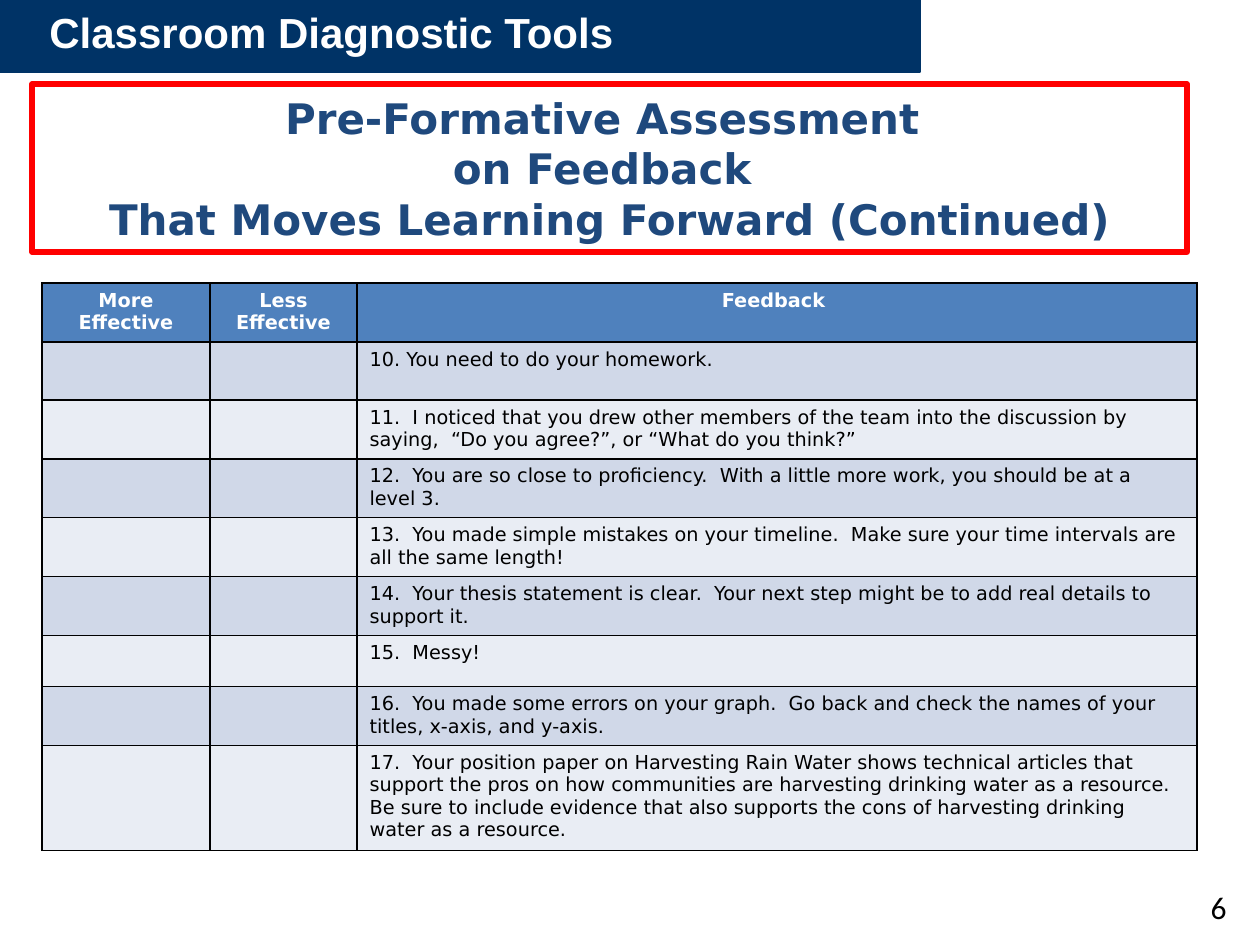
from pptx import Presentation
from pptx.dml.color import RGBColor
from pptx.enum.shapes import MSO_SHAPE
from pptx.enum.text import MSO_ANCHOR, PP_ALIGN
from pptx.oxml import parse_xml
from pptx.oxml.ns import nsdecls
from pptx.util import Emu, Pt

PX = 914400 // 126
NAVY, BLUE, RED = "003366", "1F497D", "FF0000"
WHITE, BLACK = "FFFFFF", "000000"
HEADER_FILL, BAND_FILLS = "4F81BD", ("D0D8E8", "E9EDF4")
BODY_FONT = "DejaVu Sans"

BANNER = "Classroom Diagnostic Tools"
TITLE = "Pre-Formative Assessment \von Feedback \vThat Moves Learning Forward (Continued)"
SLIDE_NUMBER = "6"
HEADERS = ["More Effective", "Less Effective", "Feedback "]
FEEDBACK = [
    "10. You need to do your homework.",
    "11.  I noticed that you drew other members of the team into the discussion by saying,  “Do you agree?”, or “What do you think?”",
    "12.  You are so close to proficiency.  With a little more work, you should be at a level 3.",
    "13.  You made simple mistakes on your timeline.  Make sure your time intervals are all the same length!",
    "14.  Your thesis statement is clear.  Your next step might be to add real details to support it.",
    "15.  Messy!",
    "16.  You made some errors on your graph.  Go back and check the names of your titles, x-axis, and y-axis.",
    "17.  Your position paper on Harvesting Rain Water shows technical articles that support the pros on how communities are harvesting drinking water as a resource.  Be sure to include evidence that also supports the cons of harvesting drinking water as a resource.",
]
COLUMN_WIDTHS = [168, 147, 840]
ROW_HEIGHTS = [58, 58, 57, 58, 58, 57, 51, 58, 102]
TABLE_LEFT, TABLE_TOP = 42, 283


def px(*lengths):
    return [Emu(length * PX) for length in lengths]


def color(hex_string):
    return RGBColor.from_string(hex_string)


def write(frame, text, size, font, hex_string, bold=False, align=PP_ALIGN.LEFT):
    frame.text = text
    for paragraph in frame.paragraphs:
        paragraph.alignment = align
        for run in paragraph.runs:
            run.font.size = Pt(size)
            run.font.name = font
            run.font.bold = bold
            run.font.color.rgb = color(hex_string)


def add_borders(cell):
    properties = cell._tc.get_or_add_tcPr()
    for side in ("lnL", "lnR", "lnT", "lnB"):
        properties.append(parse_xml(
            f'<a:{side} {nsdecls("a")} w="{Pt(1)}"><a:solidFill>'
            f'<a:srgbClr val="{BLACK}"/></a:solidFill></a:{side}>'))


def add_banner(slide):
    band = slide.shapes.add_shape(MSO_SHAPE.RECTANGLE, *px(0, -1, 920, 73))
    band.shadow.inherit = False
    band.fill.solid()
    band.fill.fore_color.rgb = color(NAVY)
    band.line.color.rgb = color(NAVY)
    band.line.width = Pt(0.75)
    label = slide.shapes.add_textbox(*px(37, 0, 595, 64))
    label.text_frame.word_wrap = False
    write(label.text_frame, BANNER, 24, "Arial", WHITE, bold=True)


def add_title(slide):
    title = slide.shapes.title
    title.left, title.top, title.width, title.height = px(32, 84, 1155, 168)
    title.line.color.rgb = color(RED)
    title.line.width = Pt(3)
    title.text_frame.vertical_anchor = MSO_ANCHOR.MIDDLE
    write(title.text_frame, TITLE, 24, BODY_FONT, BLUE, bold=True, align=PP_ALIGN.CENTER)


def add_slide_number(slide):
    box = slide.shapes.add_textbox(*px(945, 882, 294, 50))
    box.text_frame.word_wrap = True
    box.text_frame.vertical_anchor = MSO_ANCHOR.MIDDLE
    write(box.text_frame, SLIDE_NUMBER, 18, "Calibri", BLACK, align=PP_ALIGN.RIGHT)


def add_feedback_table(slide):
    rows = [HEADERS] + [["", "", comment] for comment in FEEDBACK]
    area = px(TABLE_LEFT, TABLE_TOP, sum(COLUMN_WIDTHS), sum(ROW_HEIGHTS))
    table = slide.shapes.add_table(len(rows), len(HEADERS), *area).table
    for column, width in zip(table.columns, px(*COLUMN_WIDTHS)):
        column.width = width
    for row, height in zip(table.rows, px(*ROW_HEIGHTS)):
        row.height = height
    for row_index, texts in enumerate(rows):
        is_header = row_index == 0
        fill = HEADER_FILL if is_header else BAND_FILLS[(row_index - 1) % 2]
        for column_index, text in enumerate(texts):
            cell = table.cell(row_index, column_index)
            add_borders(cell)
            cell.fill.solid()
            cell.fill.fore_color.rgb = color(fill)
            if text:
                write(cell.text_frame, text, 11, BODY_FONT,
                      WHITE if is_header else BLACK, bold=is_header,
                      align=PP_ALIGN.CENTER if is_header else PP_ALIGN.LEFT)


def main():
    presentation = Presentation()
    presentation.slide_width, presentation.slide_height = px(1260, 945)
    slide = presentation.slides.add_slide(presentation.slide_layouts[5])
    add_banner(slide)
    add_title(slide)
    add_slide_number(slide)
    add_feedback_table(slide)
    presentation.save("out.pptx")


if __name__ == "__main__":
    main()
